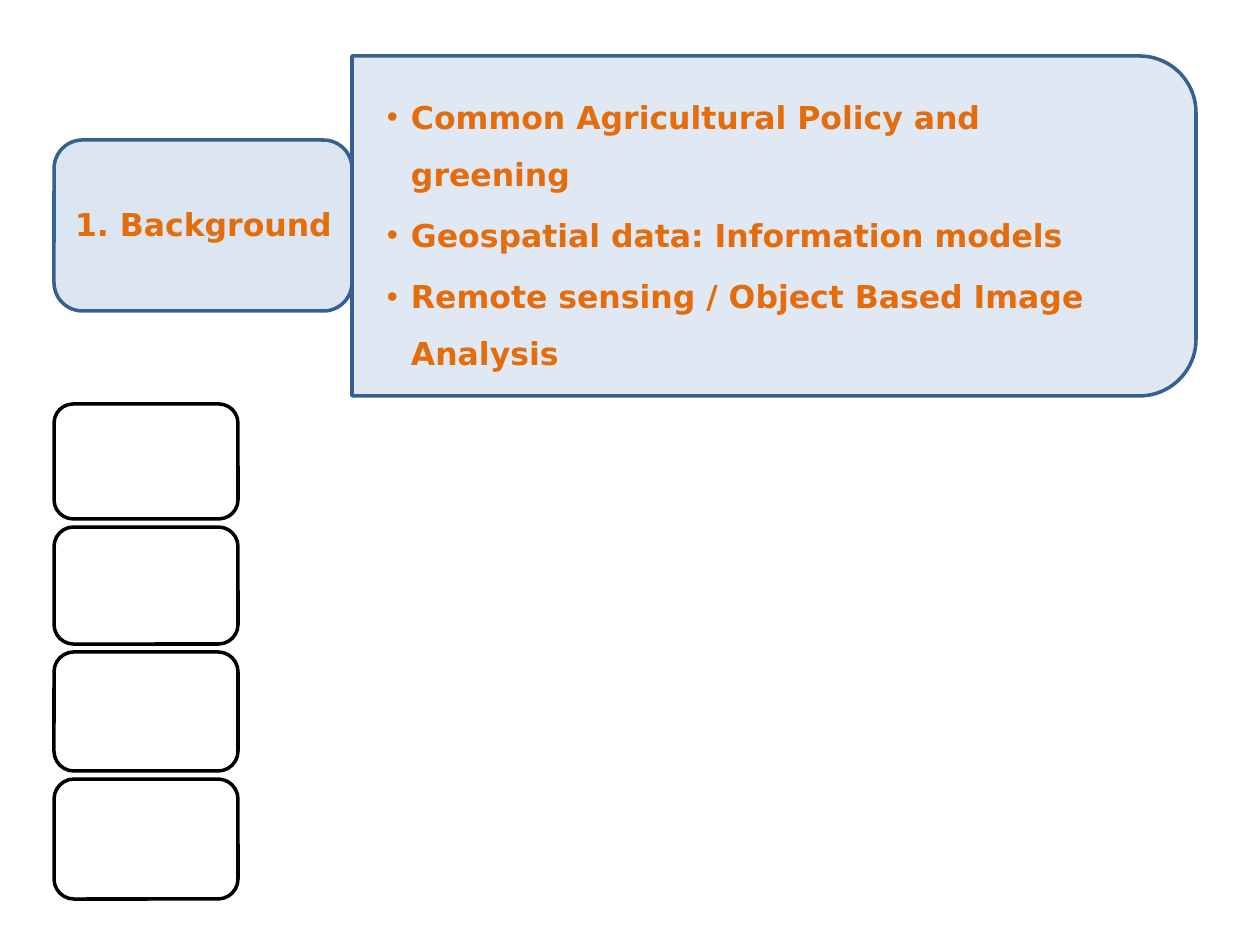
"""Build the agenda slide: a highlighted Background topic above four empty topic boxes."""
from dataclasses import dataclass

from lxml.etree import SubElement
from pptx import Presentation
from pptx.dml.color import RGBColor
from pptx.enum.shapes import MSO_SHAPE
from pptx.enum.text import MSO_ANCHOR, MSO_AUTO_SIZE, PP_ALIGN
from pptx.oxml.ns import qn
from pptx.shapes.autoshape import Shape
from pptx.slide import Slide
from pptx.text.text import _Paragraph
from pptx.util import Emu, Pt

PIXELS_PER_INCH = 126
FONT = "DejaVu Sans"
COLORS = {
    "pale": "DCE6F2",
    "border": "376092",
    "accent": "E46C0A",
    "white": "FFFFFF",
    "black": "000000",
}
TOPICS = [
    "Common Agricultural Policy and greening",
    "Geospatial data: Information models",
    "Remote sensing / Object Based Image Analysis",
]
STACK_LEFT, STACK_TOP, STACK_WIDTH, STACK_GAP = 54, 404, 184, 8
STACK_HEIGHTS = [115, 117, 119, 120]


@dataclass(frozen=True)
class Frame:
    left: int
    top: int
    width: int
    height: int


@dataclass(frozen=True)
class Panel:
    frame: Frame
    fill: str = "white"
    border: str = "black"
    preset: MSO_SHAPE = MSO_SHAPE.ROUNDED_RECTANGLE
    rotation: int = 0
    opacity: int = 100


def px(length: int) -> Emu:
    return Emu(round(length * 914400 / PIXELS_PER_INCH))


def color(name: str) -> RGBColor:
    return RGBColor.from_string(COLORS[name])


def draw_panel(page: Slide, panel: Panel) -> None:
    frame = panel.frame
    box = page.shapes.add_shape(
        panel.preset, px(frame.left), px(frame.top), px(frame.width), px(frame.height)
    )
    box.rotation = panel.rotation
    box.shadow.inherit = False
    box.fill.solid()
    box.fill.fore_color.rgb = color(panel.fill)
    box.line.color.rgb = color(panel.border)
    box.line.width = Pt(2)
    if panel.opacity < 100:
        tint = box.element.spPr.find(qn("a:solidFill")).find(qn("a:srgbClr"))
        SubElement(tint, qn("a:alpha")).set("val", str(panel.opacity * 1000))


def place_text(page: Slide, box: Shape, frame: Frame, inset_x: int, inset_y: int) -> None:
    box.left, box.top = px(frame.left), px(frame.top)
    box.width, box.height = px(frame.width), px(frame.height)
    text = box.text_frame
    text.word_wrap = True
    text.auto_size = MSO_AUTO_SIZE.NONE
    text.vertical_anchor = MSO_ANCHOR.MIDDLE
    text.margin_left = text.margin_right = px(inset_x)
    text.margin_top = text.margin_bottom = px(inset_y)
    page.shapes.element.append(box.element)


def write_text(para: _Paragraph, words: str, spacing: float, after: float) -> None:
    para.line_spacing = spacing
    para.space_before = Pt(0)
    para.space_after = Pt(after)
    span = para.add_run()
    span.text = words
    span.font.name = FONT
    span.font.size = Pt(18)
    span.font.bold = True
    span.font.color.rgb = color("accent")


def add_bullet(para: _Paragraph, indent: int) -> None:
    properties = para._p.get_or_add_pPr()
    properties.set("marL", str(px(indent)))
    properties.set("indent", str(-px(indent)))
    SubElement(properties, qn("a:buChar")).set("char", "•")


def main() -> None:
    deck = Presentation()
    deck.slide_width, deck.slide_height = px(1260), px(945)
    page = deck.slides.add_slide(deck.slide_layouts[1])
    title, body = page.placeholders[0], page.placeholders[1]

    draw_panel(page, Panel(Frame(604, -196, 340, 844), "pale", "border",
                           MSO_SHAPE.ROUND_2_SAME_RECTANGLE, 90, 90))
    place_text(page, body, Frame(353, 72, 827, 307), 34, 18)
    for index, topic in enumerate(TOPICS):
        para = body.text_frame.add_paragraph() if index else body.text_frame.paragraphs[0]
        write_text(para, topic, 1.5, 2.7)
        add_bullet(para, 24)

    draw_panel(page, Panel(Frame(54, 140, 298, 171), "pale", "border"))
    place_text(page, title, Frame(63, 149, 281, 155), 9, 5)
    heading = title.text_frame.paragraphs[0]
    heading.alignment = PP_ALIGN.CENTER
    write_text(heading, "1. Background", 0.9, 6.3)

    top = STACK_TOP
    for height in STACK_HEIGHTS:
        draw_panel(page, Panel(Frame(STACK_LEFT, top, STACK_WIDTH, height)))
        top += height + STACK_GAP

    deck.save("out.pptx")


if __name__ == "__main__":
    main()
